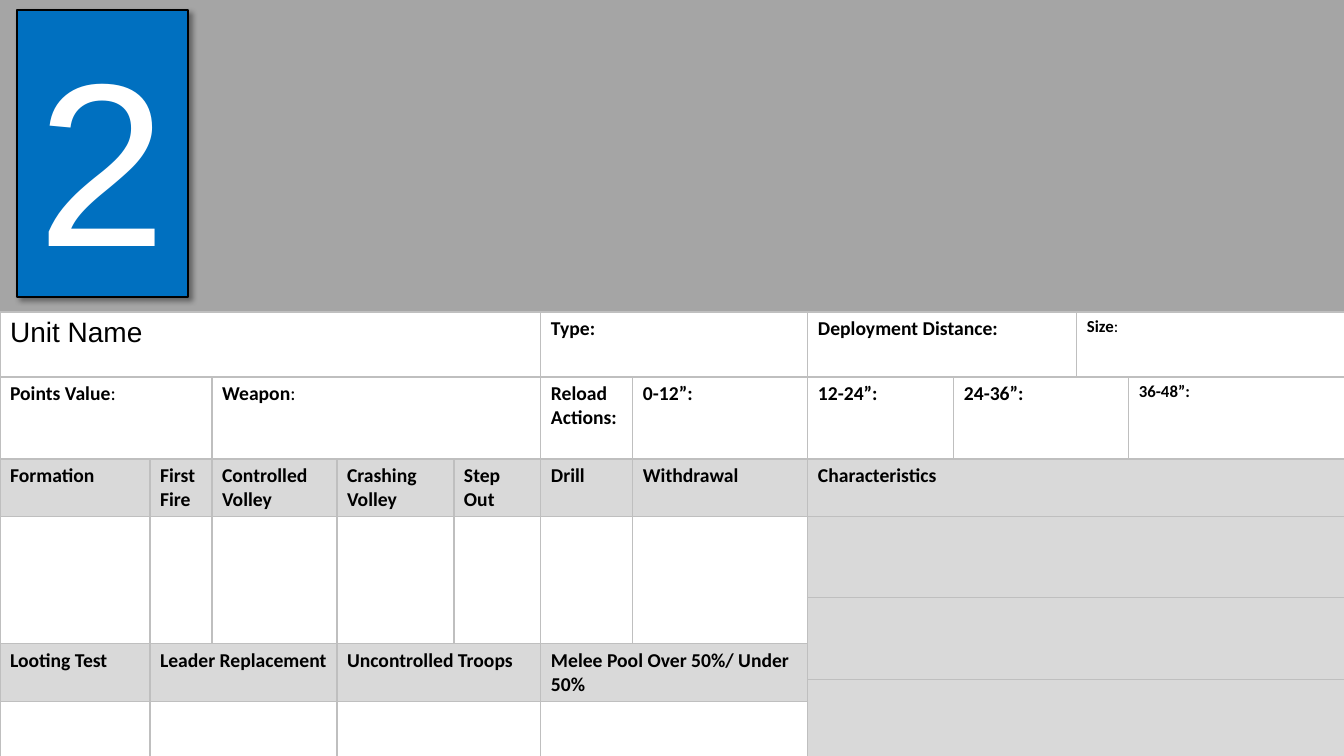
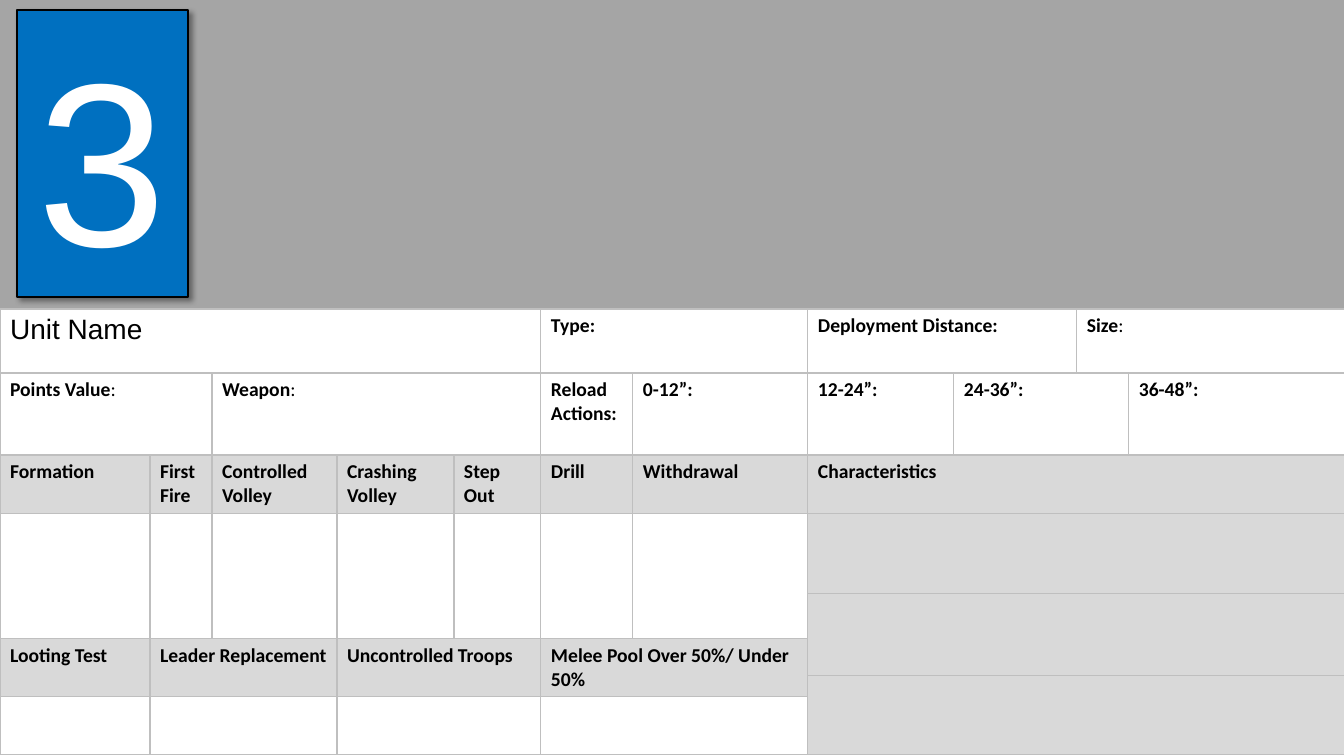
from lxml import etree
from pptx import Presentation
from pptx.dml.color import RGBColor
from pptx.enum.shapes import MSO_SHAPE
from pptx.enum.text import MSO_ANCHOR, PP_ALIGN
from pptx.oxml.ns import qn
from pptx.util import Emu, Pt

RECTANGLE = MSO_SHAPE.RECTANGLE
MIDDLE = MSO_ANCHOR.MIDDLE
CENTER = PP_ALIGN.CENTER
EMU_PER_PX = 914400 / 100.8

COLORS = {
    "white": "FFFFFF",
    "black": "000000",
    "banner": "A5A5A5",
    "heading": "D9D9D9",
    "border": "BFBFBF",
    "badge": "0070C0",
}
FORMATS = {
    "name": {"size": Pt(20), "name": "Arial", "bold": False},
    "label": {"size": Pt(14), "name": "Calibri", "bold": True},
    "number": {"size": Pt(166), "name": "Arial", "bold": False},
}

COLUMN_WIDTHS = [150, 62, 125, 117, 87, 92, 175, 146, 123, 52, 217]
TABLE_TOP = -3
CARDS = [
    {"number": "2", "rows": [315, 65, 82, 57, 81, 46, 36, 21, 57], "small": ["Size:", "36-48”:"]},
    {"number": "3", "rows": [312, 64, 82, 59, 80, 45, 37, 21, 58], "small": []},
]
LIGHT_COLONS = ["Size:", "Points Value:", "Weapon:"]

CELLS = [
    (0, 0, 1, 11, "", "banner"),
    (1, 0, 1, 5, "Unit Name", "white"),
    (1, 5, 1, 2, "Type:", "white"),
    (1, 7, 1, 2, "Deployment Distance:", "white"),
    (1, 9, 1, 2, "Size:", "white"),
    (2, 0, 1, 2, "Points Value:", "white"),
    (2, 2, 1, 3, "Weapon:", "white"),
    (2, 5, 1, 1, "Reload Actions:", "white"),
    (2, 6, 1, 1, "0-12”:", "white"),
    (2, 7, 1, 1, "12-24”:", "white"),
    (2, 8, 1, 2, "24-36”:", "white"),
    (2, 10, 1, 1, "36-48”:", "white"),
    (3, 7, 1, 4, "Characteristics", "heading"),
    (4, 7, 1, 4, "", "heading"),
    (5, 7, 2, 4, "", "heading"),
    (7, 7, 2, 4, "", "heading"),
]
FORMATION_HEADINGS = ["Formation", "First Fire", "Controlled Volley", "Crashing Volley",
                      "Step Out", "Drill", "Withdrawal"]
for column, heading in enumerate(FORMATION_HEADINGS):
    CELLS.append((3, column, 1, 1, heading, "heading"))
    CELLS.append((4, column, 2, 1, "", "white"))
TEST_HEADINGS = [(0, 1, "Looting Test"), (1, 2, "Leader Replacement"),
                 (3, 2, "Uncontrolled Troops"), (5, 2, "Melee Pool Over 50%/ Under 50%")]
for column, span, heading in TEST_HEADINGS:
    CELLS.append((6, column, 2, span, heading, "heading"))
    CELLS.append((8, column, 1, span, "", "white"))


def px(value):
    return Emu(round(value * EMU_PER_PX))


def add_run(paragraph, text, color, format_values):
    run = paragraph.add_run()
    run.text = text
    run.font.color.rgb = RGBColor.from_string(COLORS[color])
    for attribute, value in format_values.items():
        setattr(run.font, attribute, value)


presentation = Presentation()
presentation.slide_width = px(1344)
presentation.slide_height = px(756)

for card in CARDS:
    slide = presentation.slides.add_slide(presentation.slide_layouts[6])
    table = slide.shapes.add_table(
        len(card["rows"]), len(COLUMN_WIDTHS), 0, px(TABLE_TOP),
        px(sum(COLUMN_WIDTHS)), px(sum(card["rows"]))).table
    table.first_row = False
    table.horz_banding = False
    for column, width in zip(table.columns, COLUMN_WIDTHS):
        column.width = px(width)
    for row, height in zip(table.rows, card["rows"]):
        row.height = px(height)

    for top, left, row_span, column_span, text, fill in CELLS:
        origin = table.cell(top, left)
        if row_span * column_span > 1:
            origin.merge(table.cell(top + row_span - 1, left + column_span - 1))
        for row in range(top, top + row_span):
            for column in range(left, left + column_span):
                cell = table.cell(row, column)
                properties = cell._tc.get_or_add_tcPr()
                for side in ("lnL", "lnR", "lnT", "lnB"):
                    banner_edge = fill == "banner" and side != "lnB"
                    width = Pt(0.5) if banner_edge else Pt(1)
                    line = etree.SubElement(properties, qn("a:" + side), w=str(width))
                    solid = etree.SubElement(line, qn("a:solidFill"))
                    etree.SubElement(solid, qn("a:srgbClr"),
                                     val=COLORS["banner" if banner_edge else "border"])
                cell.fill.solid()
                cell.fill.fore_color.rgb = RGBColor.from_string(COLORS[fill])
        if text:
            paragraph = origin.text_frame.paragraphs[0]
            label_format = dict(FORMATS["name" if text == "Unit Name" else "label"])
            if text in card["small"]:
                label_format["size"] = Pt(12)
            if text in LIGHT_COLONS:
                add_run(paragraph, text[:-1], "black", label_format)
                add_run(paragraph, ":", "black", {**label_format, "bold": False})
            else:
                add_run(paragraph, text, "black", label_format)

    badge = slide.shapes.add_shape(RECTANGLE, px(17), px(10), px(171), px(287))
    badge.fill.solid()
    badge.fill.fore_color.rgb = RGBColor.from_string(COLORS["badge"])
    badge.line.color.rgb = RGBColor.from_string(COLORS["black"])
    badge.line.width = Pt(1)
    badge.shadow.inherit = False
    effects = badge._element.spPr.find(qn("a:effectLst"))
    shadow = etree.SubElement(effects, qn("a:outerShdw"), blurRad=str(Pt(4)), dist=str(Pt(3)),
                              dir="2700000", algn="tl", rotWithShape="0")
    shadow_color = etree.SubElement(shadow, qn("a:srgbClr"), val=COLORS["black"])
    etree.SubElement(shadow_color, qn("a:alpha"), val="40000")
    badge.text_frame.vertical_anchor = MIDDLE
    paragraph = badge.text_frame.paragraphs[0]
    paragraph.alignment = CENTER
    add_run(paragraph, card["number"], "white", FORMATS["number"])

presentation.save("out.pptx")
